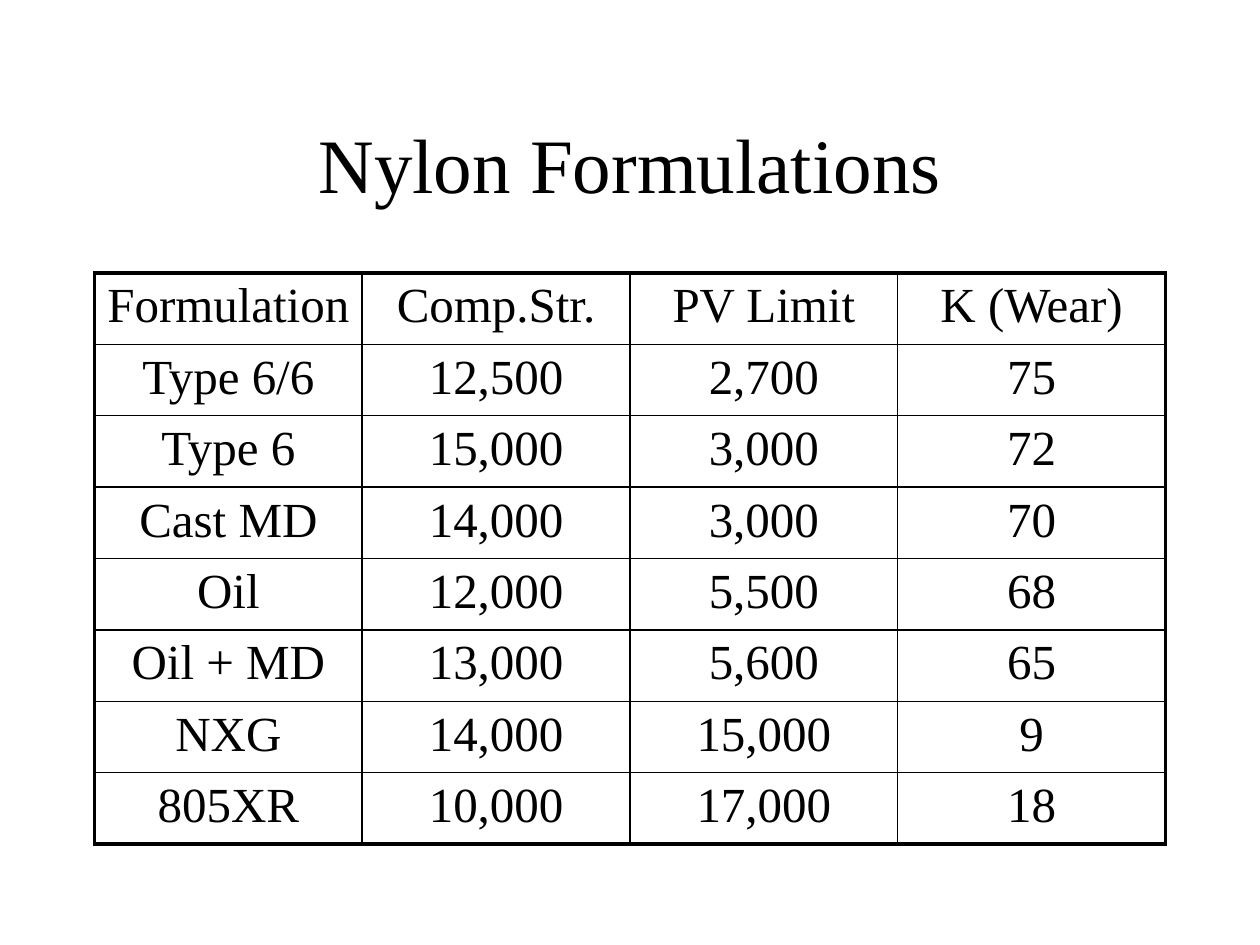
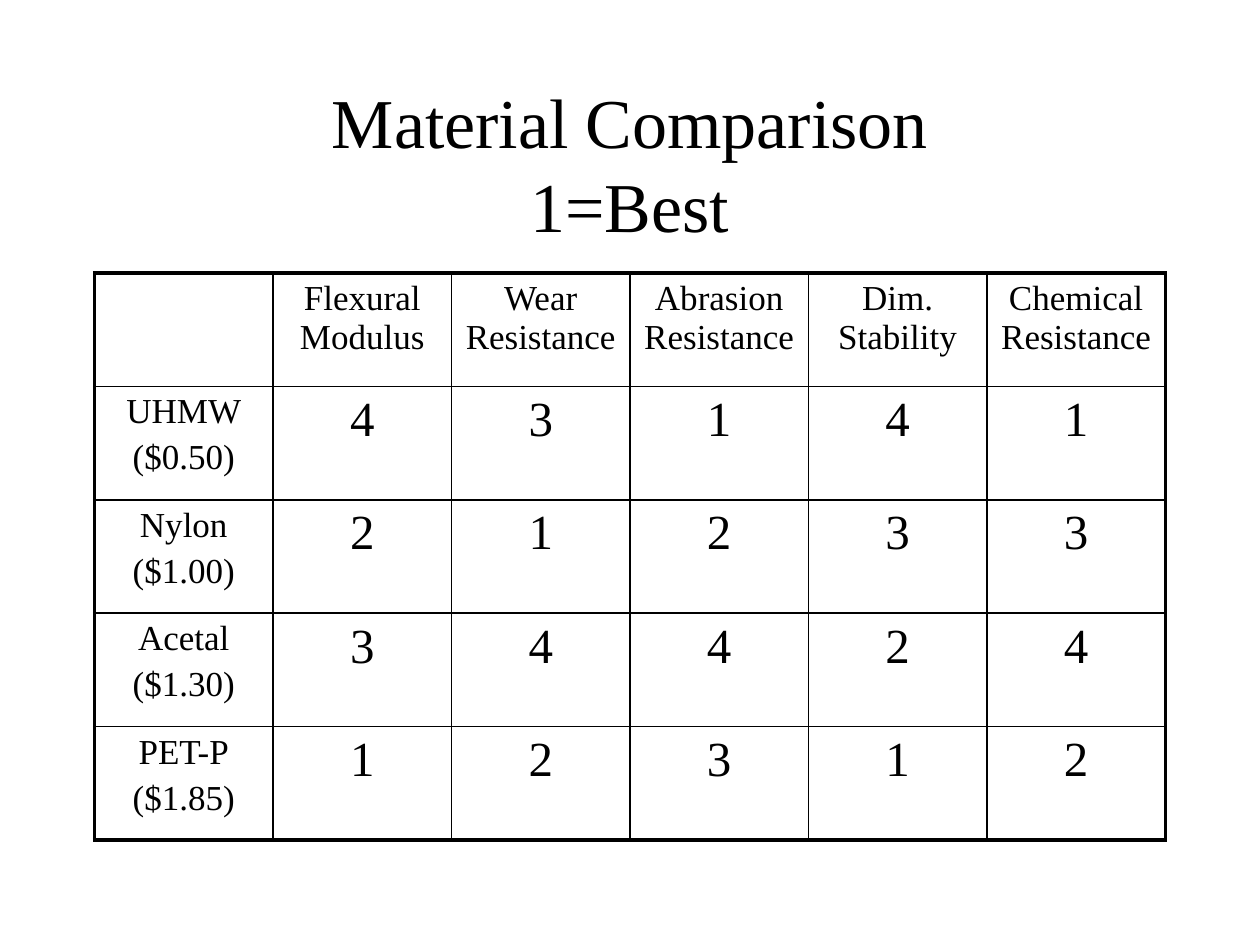
"""Build two slides with titled, ruled tables of material properties."""
from lxml.etree import SubElement
from pptx import Presentation
from pptx.dml.color import RGBColor
from pptx.enum.text import MSO_ANCHOR, MSO_AUTO_SIZE, PP_ALIGN
from pptx.oxml.ns import qn
from pptx.util import Inches, Pt

COLORS = {"text": "000000", "rule": "000000"}
FONT = "Times New Roman"
COLS, ROWS = 120, 90
LEFT, WIDTH = 9, 102
TITLE_TOP, TITLE_HEIGHT, TABLE_TOP = 8, 15, 26
OUTER, INNER = 2.25, 1

FORMULATIONS = [
    ["Formulation", "Comp.Str.", "PV Limit", "K (Wear)"],
    ["Type 6/6", "12,500", "2,700", "75"],
    ["Type 6", "15,000", "3,000", "72"],
    ["Cast MD", "14,000", "3,000", "70"],
    ["Oil", "12,000", "5,500", "68"],
    ["Oil + MD", "13,000", "5,600", "65"],
    ["NXG", "14,000", "15,000", "9"],
    ["805XR", "10,000", "17,000", "18"],
]
COMPARISON = [
    ["", "Flexural Modulus", "Wear Resistance", "Abrasion Resistance",
     "Dim. Stability", "Chemical Resistance"],
    ["UHMW\n($0.50)", "4", "3", "1", "4", "1"],
    ["Nylon\n($1.00)", "2", "1", "2", "3", "3"],
    ["Acetal\n($1.30)", "3", "4", "4", "2", "4"],
    ["PET-P\n($1.85)", "1", "2", "3", "1", "2"],
]


class Deck:
    def __init__(self):
        self.prs = Presentation()
        self.prs.slide_width, self.prs.slide_height = Inches(10), Inches(7.5)
        self.s = None

    def box(self, x, y, w, h):
        dx, dy = self.prs.slide_width / COLS, self.prs.slide_height / ROWS
        return round(x * dx), round(y * dy), round(w * dx), round(h * dy)

    def slide(self):
        self.s = self.prs.slides.add_slide(self.prs.slide_layouts[5])

    def run(self, p, text, size):
        p.alignment = PP_ALIGN.CENTER
        r = p.add_run()
        r.text = text
        r.font.name, r.font.size = FONT, Pt(size)
        r.font.color.rgb = RGBColor.from_string(COLORS["text"])

    def title(self, text, size):
        sp = self.s.shapes.title
        sp.left, sp.top, sp.width, sp.height = self.box(
            LEFT, TITLE_TOP, WIDTH, TITLE_HEIGHT)
        tf = sp.text_frame
        tf.auto_size = MSO_AUTO_SIZE.NONE
        tf.vertical_anchor = MSO_ANCHOR.MIDDLE
        p = tf.paragraphs[0]
        for i, line in enumerate(text.split("\n")):
            if i:
                p.add_line_break()
            self.run(p, line, size)

    def borders(self, cell, outer):
        tcPr = cell._tc.get_or_add_tcPr()
        for side in "LRTB":
            width = Pt(OUTER if side in outer else INNER)
            ln = SubElement(tcPr, qn(f"a:ln{side}"), w=str(width))
            fill = SubElement(ln, qn("a:solidFill"))
            SubElement(fill, qn("a:srgbClr"), val=COLORS["rule"])

    def cell(self, cell, text, size, outer):
        self.borders(cell, outer)
        cell.fill.background()
        tf = cell.text_frame
        for i, line in enumerate(text.split("\n") if text else []):
            p = tf.add_paragraph() if i else tf.paragraphs[0]
            p.space_before = Pt(0.2 * size)
            self.run(p, line, size)

    def table(self, data, row_height, label_size, value_size):
        n, m = len(data), len(data[0])
        tbl = self.s.shapes.add_table(
            n, m, *self.box(LEFT, TABLE_TOP, WIDTH, n * row_height)).table
        tbl.first_row = tbl.horz_banding = False
        for i, row in enumerate(data):
            for j, text in enumerate(row):
                edges = {"L": j == 0, "R": j == m - 1,
                         "T": i == 0, "B": i == n - 1}
                outer = [side for side, on in edges.items() if on]
                size = value_size if i and j else label_size
                self.cell(tbl.cell(i, j), text, size, outer)


def main():
    deck = Deck()
    deck.slide()
    deck.title("Nylon Formulations", 44)
    deck.table(FORMULATIONS, 6.8, 28, 28)
    deck.slide()
    deck.title("Material Comparison\n1=Best", 40)
    deck.table(COMPARISON, 10.8, 20, 28)
    deck.prs.save("out.pptx")


if __name__ == "__main__":
    main()
